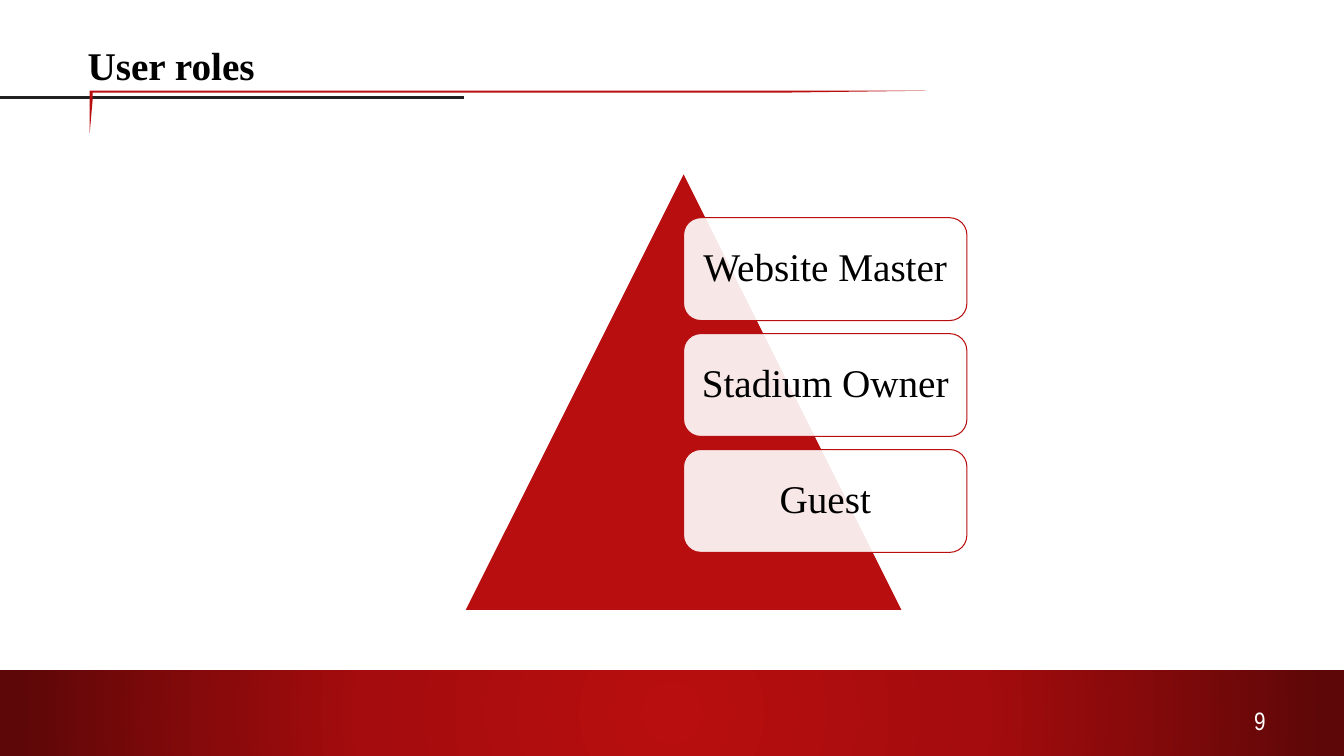
from lxml import etree
from pptx import Presentation
from pptx import util as u
from pptx.dml.color import RGBColor
from pptx.enum import shapes, text
from pptx.oxml import ns

PX = 9144
COLORS = {
    "red": "B80E0F", "crimson": "A40C0D", "maroon": "8A0A0B", "wine": "5E0708",
    "white": "FFFFFF", "black": "000000", "gray": "212121",
}
FOOTER_STOPS = [(0, "red"), (46, "crimson"), (66, "maroon"), (97, "wine")]
ROLES = ["Website Master", "Stadium Owner", "Guest"]
ROLE_STEP = 115
CORNER = [(89, 90), (919, 90), (770, 92), (92, 92), (92, 98), (89, 132)]


def color(name):
    """Return the RGB value of a named colour."""
    return RGBColor.from_string(COLORS[name])


def box(left, top, width, height):
    """Turn a box in px into EMU."""
    return [u.Emu(value * PX) for value in (left, top, width, height)]


def child(parent, tag, **attributes):
    """Append a drawing element to a parent."""
    return etree.SubElement(parent, ns.qn(tag), attributes)


def paint(shape, fill):
    """Give a shape a plain fill without line or shadow."""
    shape.shadow.inherit = False
    shape.fill.solid()
    shape.fill.fore_color.rgb = color(fill)
    shape.line.fill.background()


def add_preset(slide, kind, bounds, fill):
    """Add a filled preset shape."""
    shape = slide.shapes.add_shape(kind, *box(*bounds))
    paint(shape, fill)
    return shape


def write(paragraph, words, size, ink, font="Times New Roman", bold=False):
    """Add one formatted run to a paragraph."""
    run = paragraph.add_run()
    run.text = words
    run.font.name = font
    run.font.size = u.Pt(size)
    run.font.bold = bold
    run.font.color.rgb = color(ink)


def add_label(slide, bounds, *run_settings, **options):
    """Add a wrapping text box with one run."""
    frame = slide.shapes.add_textbox(*box(*bounds)).text_frame
    frame.word_wrap = True
    write(frame.paragraphs[0], *run_settings, **options)


def add_footer(slide):
    """Add the bottom band with its circular gradient."""
    band = add_preset(slide, shapes.MSO_SHAPE.RECTANGLE, (0, 665, 1333, 85), "red")
    band.fill.gradient()
    gradient = band.element.spPr.find(ns.qn("a:gradFill"))
    gradient.clear()
    stops = child(gradient, "a:gsLst")
    for position, name in FOOTER_STOPS:
        stop = child(stops, "a:gs", pos=str(position * 1000))
        child(stop, "a:srgbClr", val=COLORS[name])
    circle = child(gradient, "a:path", path="circle")
    child(circle, "a:fillToRect", l="50000", t="50000", r="50000", b="50000")


def add_role(slide, top, role):
    """Add a translucent rounded card naming a role."""
    kind = shapes.MSO_SHAPE.ROUNDED_RECTANGLE
    card = add_preset(slide, kind, (678, top, 281, 102), "white")
    card.line.color.rgb = color("red")
    card.line.width = u.Pt(0.75)
    white = card.element.spPr.find(ns.qn("a:solidFill"))[0]
    child(white, "a:alpha", val="90000")
    frame = card.text_frame
    frame.word_wrap = True
    frame.vertical_anchor = text.MSO_ANCHOR.MIDDLE
    frame.margin_left = frame.margin_right = u.Emu(12 * PX)
    frame.margin_top = frame.margin_bottom = u.Emu(12 * PX)
    paragraph = frame.paragraphs[0]
    paragraph.alignment = text.PP_ALIGN.CENTER
    paragraph.line_spacing = 0.9
    write(paragraph, role, 28, "black")


def add_rule(slide, left, right, top):
    """Add the dark horizontal rule under the title."""
    rule = slide.shapes.add_connector(
        shapes.MSO_CONNECTOR.STRAIGHT, left * PX, top * PX, right * PX, top * PX)
    rule.line.color.rgb = color("gray")
    rule.line.width = u.Pt(2.25)
    child(rule.element.spPr, "a:effectLst")


def add_outline(slide, points, fill):
    """Add a closed filled outline through the points."""
    builder = slide.shapes.build_freeform(*points[0], scale=PX)
    builder.add_line_segments(points[1:], close=True)
    paint(builder.convert_to_shape(), fill)


def main():
    """Build and save the user roles slide."""
    presentation = Presentation()
    presentation.slide_width = u.Emu(1333 * PX)
    presentation.slide_height = u.Emu(750 * PX)
    slide = presentation.slides.add_slide(presentation.slide_layouts[6])
    add_footer(slide)
    add_preset(slide, shapes.MSO_SHAPE.ISOSCELES_TRIANGLE, (462, 173, 432, 432), "red")
    for index, role in enumerate(ROLES):
        add_role(slide, 216 + index * ROLE_STEP, role)
    add_rule(slide, 0, 460, 97)
    add_outline(slide, CORNER, "red")
    add_label(slide, (77, 36, 515, 57), "User roles", 28, "black", bold=True)
    add_label(slide, (1234, 695, 99, 55), "9", 18, "white", font="Arial Narrow")
    presentation.save("out.pptx")


if __name__ == "__main__":
    main()
